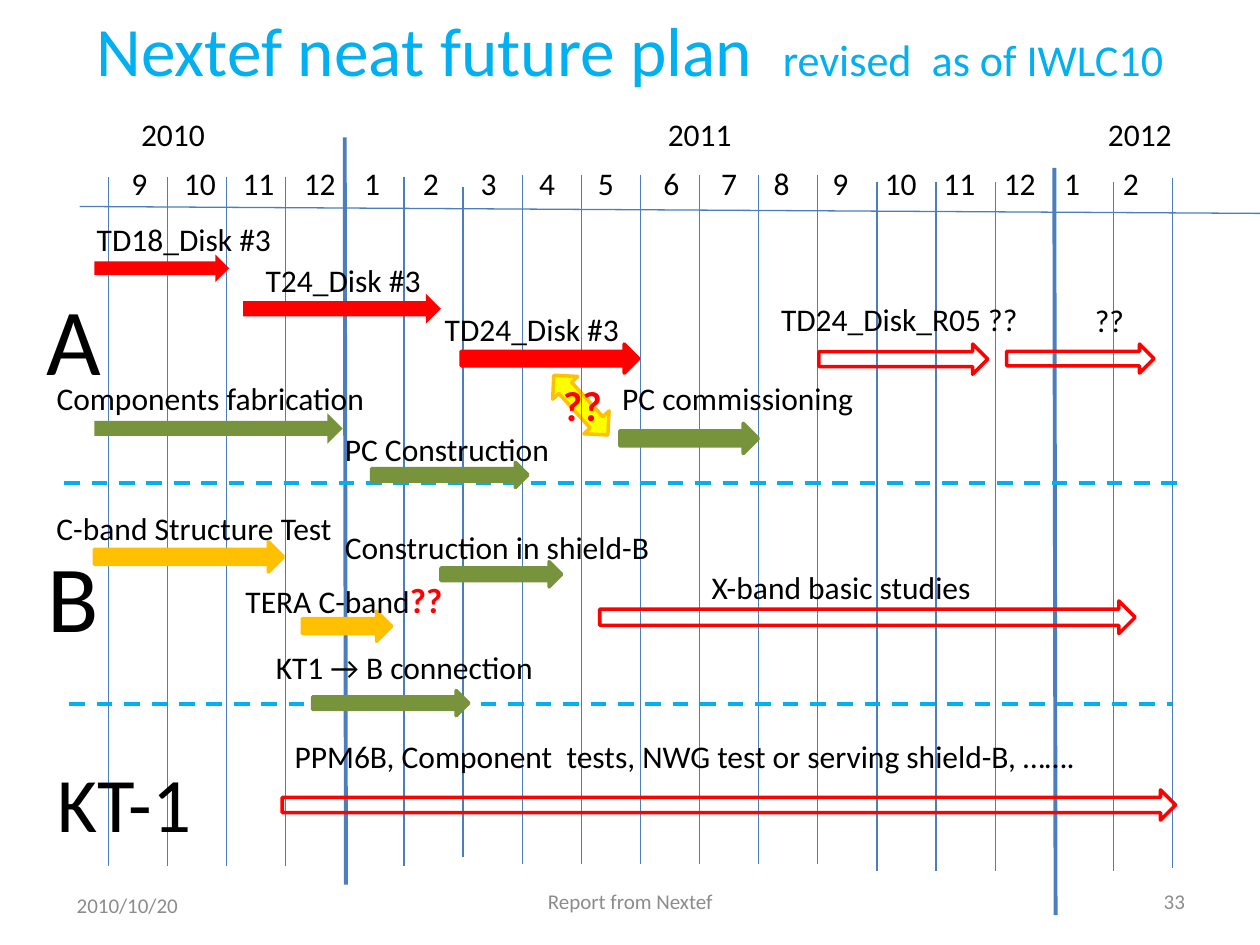
import collections

import lxml.etree
import pptx
import pptx.dml.color
import pptx.enum.dml
import pptx.enum.shapes
import pptx.enum.text
import pptx.oxml.ns
import pptx.util

Pt = pptx.util.Pt
Align = pptx.enum.text.PP_ALIGN
Shape = pptx.enum.shapes.MSO_SHAPE
Box = collections.namedtuple("Box", "left top width height")
Span = collections.namedtuple("Span", "text size color bold gap", defaults=(18, "000000", False, 0))
Task = collections.namedtuple("Task", "spans label arrow style")

SKY, GRID, RED, GREEN, AMBER = "00B0F0", "4B7EBC", "FF0000", "77933C", "FFC000"
STYLES = {
    "test": (RED, None),
    "test edged": (RED, RED),
    "possible": (None, RED),
    "work": (GREEN, None),
    "work edged": (GREEN, GREEN),
    "c-band": (AMBER, AMBER),
}
MONTHS = "9 10 11 12 1 2 3 4 5 6 7 8 9 10 11 12 1 2".split()
MONTH_TABS = [30, 63.5, 98.5, 133, 166.5, 199.5, 233, 266.5, 304, 337,
              367, 400.5, 430.5, 464, 498.5, 533, 566.5]
GRID_TOPS = [101] * 6 + [107] + [100] * 6 + [104] * 3 + [107, 104, 102]

TASKS_A = [
    Task([Span("TD18_Disk #3")], (48.2, 2.4, 118), (54, 25.4, 77, 15.8), "test"),
    Task([Span("T24_Disk #3")], (144.7, 25.4, 106), (139, 47.8, 113, 17.3), "test"),
    Task([Span("TD24_Disk #3")], (247, 53.5, 118), (263.5, 76.6, 101.5, 16.6), "test edged"),
    Task([Span("TD24_Disk_R05 ??")], (439.2, 47.8, 154), (468, 76.6, 96.5, 17.3), "possible"),
    Task([Span("??")], (618.5, 48.5, 35), (575.3, 76.6, 84.2, 16.6), "possible"),
    Task([Span("Components fabrication")], (25.2, 93.1, 204), (54, 116.2, 141.8, 17.3), "work"),
    Task([Span("PC commissioning")], (348.5, 93.1, 164), (354.2, 121.9, 79.2, 17.3), "work edged"),
    Task([Span("PC Construction")], (190, 121.9, 136), (212.4, 144.2, 89.3, 14.4), "work edged"),
]
TASKS_B = [
    Task([Span("C-band Structure Test")], (25.2, 11.3, 180), (54, 33.6, 108, 17.3), "c-band"),
    Task([Span("Construction in shield-B")], (190, 22, 197), (252, 45, 69, 14.4), "work edged"),
    Task([Span("TERA C-band"), Span("??", 20, RED, True)],
         (133.2, 50.9, 130), (172.8, 73.2, 51, 17.3), "c-band"),
    Task([Span("X-band basic studies")], (399.6, 45, 197), (342.7, 67.4, 306, 18.7), "possible"),
    Task([Span("KT1 → B connection")], (150.5, 90.5, 173), (178.6, 118.6, 89.3, 14.4), "work edged"),
]
TASKS_KT1 = [
    Task([Span("PPM6B, Component"), Span(" ", gap=4),
          Span("tests, NWG test or serving shield-B, …….")],
         (161.3, 15.6, 487), (161.3, 49.4, 510.5, 17.3), "possible"),
]


def rgb(color):
    """Turn a hex string into a colour."""
    return pptx.dml.color.RGBColor.from_string(color)


def add_text(page, box, spans, align=Align.LEFT, middle=False, tabs=()):
    """Add a one-paragraph text box made of spans."""
    frame = page.shapes.add_textbox(*map(Pt, box)).text_frame
    frame.word_wrap = True
    if middle:
        frame.vertical_anchor = pptx.enum.text.MSO_ANCHOR.MIDDLE
    para = frame.paragraphs[0]
    para.alignment = align
    if tabs:
        qn = pptx.oxml.ns.qn
        stops = lxml.etree.SubElement(para._p.get_or_add_pPr(), qn("a:tabLst"))
        for tab in tabs:
            lxml.etree.SubElement(stops, qn("a:tab"), pos=str(int(Pt(tab))), algn="l")
    for item in spans:
        span = para.add_run()
        span.text = item.text
        span.font.name = "Calibri"
        span.font.size = Pt(item.size)
        span.font.bold = item.bold
        span.font.color.rgb = rgb(item.color)
        if item.gap:
            span._r.get_or_add_rPr().set("spc", str(int(item.gap * 100)))


def add_line(page, start, end, color, width, dashed=False):
    """Add a straight line between two points."""
    line = page.shapes.add_connector(
        pptx.enum.shapes.MSO_CONNECTOR.STRAIGHT, *map(Pt, start + end))
    line.line.color.rgb = rgb(color)
    line.line.width = Pt(width)
    if dashed:
        line.line.dash_style = pptx.enum.dml.MSO_LINE.DASH
    lxml.etree.SubElement(line._element.spPr, pptx.oxml.ns.qn("a:effectLst"))


def add_arrow(page, kind, box, fill, edge):
    """Add a block arrow with an optional fill and edge."""
    arrow = page.shapes.add_shape(kind, *map(Pt, box))
    arrow.shadow.inherit = False
    if fill:
        arrow.fill.solid()
        arrow.fill.fore_color.rgb = rgb(fill)
    else:
        arrow.fill.background()
    if edge:
        arrow.line.color.rgb = rgb(edge)
        arrow.line.width = Pt(2)
    else:
        arrow.line.fill.background()
    return arrow


def draw_title(page, box):
    """Write the centred title."""
    spans = [Span("Nextef neat future plan", 39.6, SKY), Span(" ", 25.2, SKY, gap=11.4),
             Span("revised", 25.2, SKY), Span(" ", 25.2, SKY, gap=5.7),
             Span("as of IWLC10", 25.2, SKY)]
    add_text(page, box, spans, Align.CENTER, True)


def draw_calendar(page, box):
    """Draw the years, the months and the month grid."""
    left, top = box.left, box.top
    add_line(page, (left - 16.5, top + 56), (left + 664.5, top + 60), GRID, 0.75)
    for index, line_top in enumerate(GRID_TOPS):
        x = left + index * box.width / (len(GRID_TOPS) - 1)
        bottom = line_top + (383 if index == 6 else 394)
        add_line(page, (x, line_top), (x, bottom), GRID, 0.75)
    for x, y in ((135, 16.5), (540.5, 34)):
        add_line(page, (left + x, top + y), (left + x + 0.7, top + y + 427), GRID, 2.25)
    add_text(page, Box(left + 11.5, top, 616, 29), [Span("2010\t2011\t2012")], tabs=(301, 552.5))
    add_text(page, Box(left + 6, top + 28, 636, 29), [Span("\t".join(MONTHS))], tabs=MONTH_TABS)


def draw_lane(page, box, name, name_box, name_size, tasks, divider=None):
    """Draw one station's lane with its name, tasks and lower divider."""
    left, top = box.left, box.top
    add_text(page, Box(left + name_box[0], top + name_box[1], *name_box[2:]),
             [Span(name, name_size)], Align.CENTER)
    if divider:
        bottom = top + box.height
        add_line(page, (left + divider[0], bottom), (left + divider[1], bottom), SKY, 2.25, True)
    for task in tasks:
        x, y, width, height = task.arrow
        add_arrow(page, Shape.RIGHT_ARROW, Box(left + x, top + y, width, height),
                  *STYLES[task.style])
        x, y, width = task.label
        add_text(page, Box(left + x, top + y, width, 29), task.spans)


def draw_conflict(page, box):
    """Draw the tilted double arrow between two competing tasks."""
    arrow = add_arrow(page, Shape.LEFT_RIGHT_ARROW, box, "FFFF00", AMBER)
    arrow.rotation = 47.8


def draw_footer(page, box):
    """Write the date, the report name and the page number."""
    parts = [("2010/10/20", 0, 2, 168, Align.LEFT),
             ("Report from Nextef", 209.5, 0, 228, Align.CENTER),
             ("33", 479.5, 0, 168, Align.RIGHT)]
    for text, x, y, width, align in parts:
        add_text(page, Box(box.left + x, box.top + y, width, 29),
                 [Span(text, 12, "8C8C8C")], align, True)


def main():
    """Build the plan slide."""
    deck = pptx.Presentation()
    deck.slide_width, deck.slide_height = Pt(720), Pt(540)
    page = deck.slides.add_slide(deck.slide_layouts[6])
    draw_conflict(page, Box(308.9, 221.8, 46, 19.4))
    draw_title(page, Box(0, 0, 720, 56))
    draw_calendar(page, Box(62, 62, 608, 460))
    draw_lane(page, Box(0, 120, 720, 156), "A", (0, 37, 84, 73), 54, TASKS_A, (36.7, 678))
    draw_lane(page, Box(0, 276, 720, 126.5), "B", (0, 27.8, 84, 73), 54, TASKS_B, (39.6, 669.6))
    draw_lane(page, Box(0, 402, 720, 98), "KT-1", (20.2, 26.4, 101.5, 60.5), 44, TASKS_KT1)
    add_text(page, Box(314.6, 213.1, 45.4, 36), [Span("??", 24, RED, True)])
    draw_footer(page, Box(36.7, 500.5, 648, 31))
    deck.save("out.pptx")


if __name__ == "__main__":
    main()
